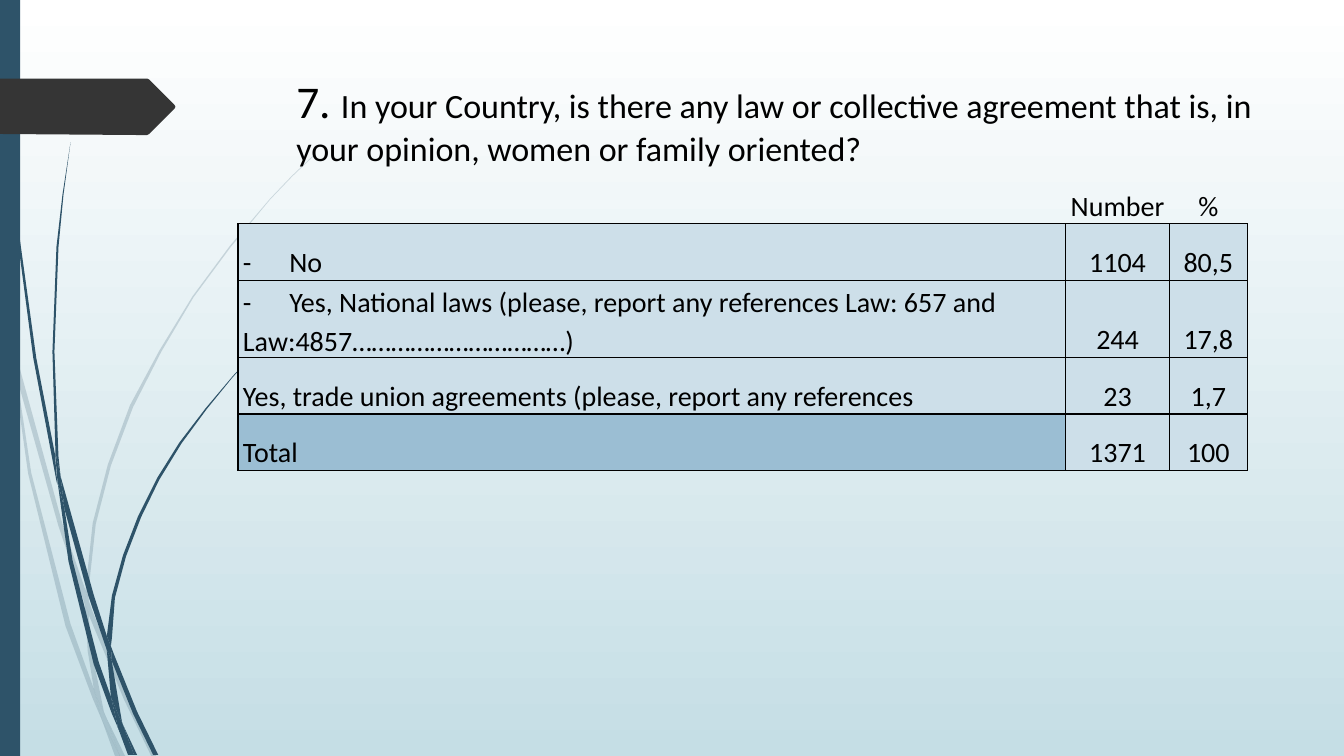
from dataclasses import dataclass

from lxml import etree
from pptx import Presentation
from pptx.dml.color import RGBColor
from pptx.enum.shapes import MSO_SHAPE
from pptx.enum.text import MSO_ANCHOR, PP_ALIGN
from pptx.oxml.ns import qn
from pptx.util import Inches, Pt

RECTANGLE = MSO_SHAPE.RECTANGLE
TOP, BOTTOM = MSO_ANCHOR.TOP, MSO_ANCHOR.BOTTOM
LEFT, CENTER = PP_ALIGN.LEFT, PP_ALIGN.CENTER

BLACK = RGBColor(0x00, 0x00, 0x00)
WHITE = RGBColor(0xFF, 0xFF, 0xFF)
MIST = RGBColor(0xC5, 0xDE, 0xE5)
NAVY = RGBColor(0x2E, 0x53, 0x69)
CHARCOAL = RGBColor(0x35, 0x35, 0x35)
PALE_BLUE = RGBColor(0xCD, 0xDF, 0xE9)
MID_BLUE = RGBColor(0x9B, 0xBE, 0xD3)

FONT = "Calibri"
Point = tuple[float, float]


@dataclass(frozen=True)
class Plant:
    opacity: int
    blades: list[list[Point]]


@dataclass(frozen=True)
class Answer:
    label: str
    number: str
    percent: str
    label_fill: RGBColor = PALE_BLUE


FADED_PLANT = Plant(20, [
    [(0.11, 3.5), (0.09, 3.22), (0, 2.82), (0, 2.99), (0.1, 3.44)],
    [(0.58, 5.22), (0.84, 5.99), (0.85, 5.86), (0.62, 5.2), (0.14, 3.45), (0.17, 3.76)],
    [(0.92, 6.07), (0.88, 5.96), (0.88, 6.1), (1.23, 6.94), (1.5, 7.5), (1.55, 7.5),
     (1.27, 6.92)],
    [(1.19, 7.5), (1.24, 7.5), (1.05, 7.11)],
    [(0.93, 6.83), (0.7, 6.19), (0.31, 4.69), (0.17, 3.76), (0.11, 3.5), (0.28, 4.7),
     (0.65, 6.21), (0.92, 6.93), (1.01, 7.14), (0.99, 7.07)],
    [(0.84, 5.99), (0.87, 6.46), (0.93, 6.83), (0.96, 6.92), (1.05, 7.11), (1.03, 7.06),
     (0.91, 6.46), (0.88, 6.1), (0.88, 6.08)],
    [(0.88, 5.84), (0.95, 5.2), (1.1, 4.62), (1.32, 4.04), (1.6, 3.49), (1.92, 2.95),
     (2.29, 2.45), (2.68, 1.98), (2.9, 1.75), (3.12, 1.54), (3.12, 1.53), (2.89, 1.75),
     (2.68, 1.97), (2.28, 2.44), (1.91, 2.94), (1.58, 3.48), (1.29, 4.02), (1.07, 4.61),
     (0.92, 5.19), (0.85, 5.84), (0.85, 5.86), (0.88, 5.96)],
    [(1.01, 7.14), (1.14, 7.5), (1.19, 7.5)],
    [(0.88, 6.08), (0.88, 6.1), (0.88, 5.96), (0.85, 5.86), (0.84, 5.99)],
    [(0.96, 6.92), (0.93, 6.83), (0.99, 7.07), (1.01, 7.14), (1.19, 7.5), (1.05, 7.11)],
])

SOLID_PLANT = Plant(100, [
    [(0.07, 1.1), (0.17, 2.33), (0.33, 3.55), (0.56, 4.77), (0.57, 4.81), (0.55, 4.57),
     (0.55, 4.53), (0.36, 3.55), (0.19, 2.32), (0.08, 1.09), (0.05, 0.48), (0.04, 0),
     (0.03, 0), (0.04, 0.48)],
    [(0.88, 5.92), (1.06, 6.45), (1.06, 6.31), (0.93, 5.9), (0.6, 4.72), (0.64, 5.05)],
    [(1.13, 6.49), (1.1, 6.41), (1.11, 6.56), (1.32, 7.08), (1.52, 7.49), (1.57, 7.49),
     (1.36, 7.06)],
    [(1.1, 6.91), (0.98, 6.57), (0.72, 5.56), (0.64, 5.05), (0.57, 4.77), (0.68, 5.57),
     (0.93, 6.59), (1.11, 7.08), (1.17, 7.22), (1.16, 7.17)],
    [(0.6, 4.72), (0.58, 4.53), (0.54, 3.49), (0.58, 2.45), (0.63, 1.93), (0.7, 1.41),
     (0.62, 1.93), (0.56, 2.45), (0.52, 3.49), (0.55, 4.49)],
    [(1.33, 7.49), (1.36, 7.49), (1.22, 7.19)],
    [(0.57, 4.77), (0.64, 5.05), (0.6, 4.72), (0.55, 4.49), (0.55, 4.53)],
    [(1.11, 6.33), (1.14, 5.93), (1.25, 5.52), (1.4, 5.13), (1.58, 4.76), (1.8, 4.4),
     (2.05, 4.06), (2.31, 3.74), (2.45, 3.59), (2.61, 3.44), (2.6, 3.44), (2.45, 3.58),
     (2.31, 3.73), (2.04, 4.05), (1.78, 4.39), (1.56, 4.74), (1.37, 5.12), (1.22, 5.51),
     (1.11, 5.91), (1.06, 6.31), (1.1, 6.41)],
    [(1.17, 7.22), (1.27, 7.49), (1.31, 7.49)],
    [(1.06, 6.45), (1.1, 6.91), (1.16, 7.06), (1.22, 7.19), (1.21, 7.16), (1.11, 6.56),
     (1.09, 6.51)],
    [(1.06, 6.45), (1.09, 6.51), (1.11, 6.56), (1.1, 6.41), (1.06, 6.31)],
    [(1.16, 7.06), (1.1, 6.91), (1.16, 7.17), (1.17, 7.22), (1.3, 7.49), (1.33, 7.49),
     (1.22, 7.19)],
])

BANNER = [(1.73, 1.08), (1.48, 1.33), (1.46, 1.34), (1.36, 1.34), (0, 1.33), (0, 0.78),
          (1.46, 0.78), (1.48, 0.79), (1.73, 1.04), (1.74, 1.06)]

COLUMN_WIDTHS = [8.21, 1.03, 0.77]
ROW_HEIGHTS = [1.03, 0.56, 0.62, 0.56, 0.56]
HEADINGS = ["", "Number", "%"]
ANSWERS = [
    Answer("-\tNo", "1104", "80,5"),
    Answer("-\tYes, National laws (please, report any references Law: 657 and "
           "Law:4857……………………………)", "244", "17,8"),
    Answer("Yes, trade union agreements (please, report any references", "23", "1,7"),
    Answer("Total", "1371", "100", MID_BLUE),
]


def paint(shape, color: RGBColor, opacity: int = 100) -> None:
    shape.shadow.inherit = False
    shape.fill.solid()
    shape.fill.fore_color.rgb = color
    shape.line.fill.background()
    if opacity < 100:
        tint = shape.fill._xPr.find(qn("a:solidFill"))[0]
        etree.SubElement(tint, qn("a:alpha"), val=str(opacity * 1000))


def draw_outline(shapes, points: list[Point], color: RGBColor, opacity: int = 100) -> None:
    corners = [(Inches(x), Inches(y)) for x, y in points]
    builder = shapes.build_freeform(*corners[0], scale=1.0)
    builder.add_line_segments(corners[1:], close=True)
    paint(builder.convert_to_shape(), color, opacity)


def draw_plant(page, plant: Plant) -> None:
    group = page.shapes.add_group_shape()
    for blade in plant.blades:
        draw_outline(group.shapes, blade, NAVY, plant.opacity)


def draw_title(page) -> None:
    box = page.shapes.add_textbox(Inches(2.84), Inches(0.68), Inches(9.75), Inches(1.4))
    box.text_frame.word_wrap = True
    box.text_frame.vertical_anchor = TOP
    para = box.text_frame.paragraphs[0]
    para.font.name = FONT
    para.font.color.rgb = BLACK
    question = ("In your Country, is there any law or collective agreement that is, "
                "in your opinion, women or family oriented?")
    for text, size in (("7. ", 32.4), (question, 24.3)):
        span = para.add_run()
        span.text = text
        span.font.size = Pt(size)


def set_borders(cell, visible_sides: str) -> None:
    properties = cell._tc.get_or_add_tcPr()
    for side in "LRTB":
        border = etree.SubElement(properties, qn(f"a:ln{side}"), w=str(Pt(1)))
        if side in visible_sides:
            fill = etree.SubElement(border, qn("a:solidFill"))
            etree.SubElement(fill, qn("a:srgbClr"), val=str(BLACK))
        else:
            etree.SubElement(border, qn("a:noFill"))


def fill_cell(cell, text: str, align: PP_ALIGN, color: RGBColor | None) -> None:
    cell.margin_left = cell.margin_right = Inches(0.05)
    cell.margin_top = cell.margin_bottom = 0
    cell.vertical_anchor = BOTTOM
    set_borders(cell, "LRTB" if color else "B")
    if color:
        cell.fill.solid()
        cell.fill.fore_color.rgb = color
    else:
        cell.fill.background()
    para = cell.text_frame.paragraphs[0]
    para.text = text
    para.alignment = align
    para.line_spacing = 1.15
    if "\t" in text:
        stops = etree.SubElement(para._p.get_or_add_pPr(), qn("a:tabLst"))
        etree.SubElement(stops, qn("a:tab"), pos=str(Inches(0.46)), algn="l")
    para.font.name = FONT
    para.font.size = Pt(20)
    para.font.color.rgb = BLACK


def draw_table(page) -> None:
    frame = page.shapes.add_table(
        len(ROW_HEIGHTS), len(COLUMN_WIDTHS), Inches(2.36), Inches(1.19),
        Inches(sum(COLUMN_WIDTHS)), Inches(sum(ROW_HEIGHTS)))
    table = frame.table
    table.first_row = table.horz_banding = False
    for column, width in zip(table.columns, COLUMN_WIDTHS):
        column.width = Inches(width)
    for row, height in zip(table.rows, ROW_HEIGHTS):
        row.height = Inches(height)
    for index, heading in enumerate(HEADINGS):
        fill_cell(table.cell(0, index), heading, CENTER, None)
    for index, answer in enumerate(ANSWERS, start=1):
        fill_cell(table.cell(index, 0), answer.label, LEFT, answer.label_fill)
        fill_cell(table.cell(index, 1), answer.number, CENTER, PALE_BLUE)
        fill_cell(table.cell(index, 2), answer.percent, CENTER, PALE_BLUE)


def main() -> None:
    deck = Presentation()
    deck.slide_width, deck.slide_height = Inches(13.33), Inches(7.5)
    page = deck.slides.add_slide(deck.slide_layouts[6])
    backdrop = page.background.fill
    backdrop.gradient()
    backdrop.gradient_angle = 270
    for stop, color in zip(backdrop.gradient_stops, (WHITE, MIST)):
        stop.color.rgb = color
    for plant in (FADED_PLANT, SOLID_PLANT):
        draw_plant(page, plant)
    paint(page.shapes.add_shape(RECTANGLE, 0, 0, Inches(0.2), deck.slide_height), NAVY)
    draw_outline(page.shapes, BANNER, CHARCOAL)
    draw_title(page)
    draw_table(page)
    deck.save("out.pptx")


if __name__ == "__main__":
    main()
